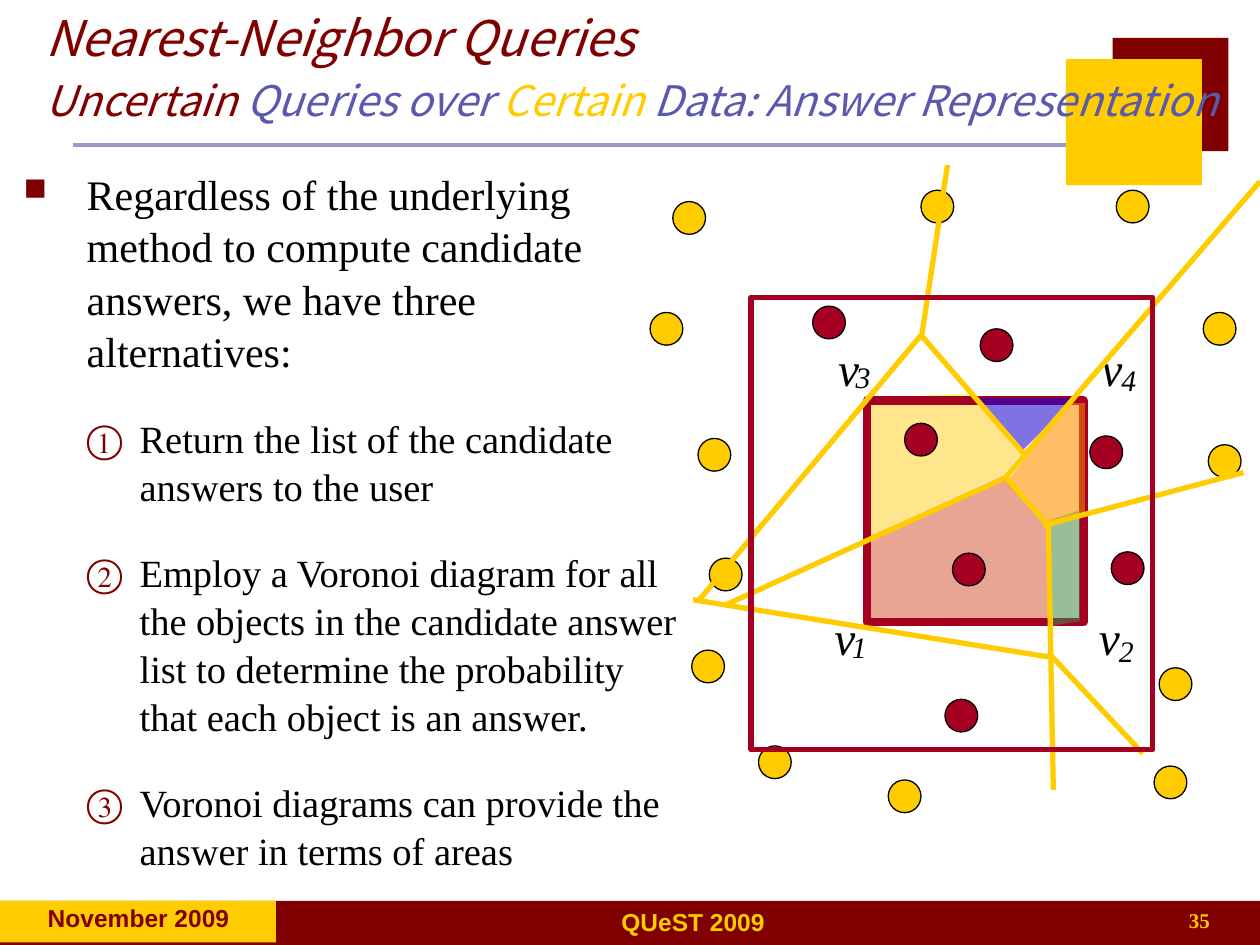
import dataclasses
from typing import NamedTuple

import lxml.etree
import pptx
import pptx.dml.color
import pptx.enum.shapes
import pptx.enum.text
import pptx.oxml.ns
import pptx.util

Inches = pptx.util.Inches
Pt = pptx.util.Pt
qn = pptx.oxml.ns.qn
ALIGN = pptx.enum.text.PP_ALIGN
SHAPE = pptx.enum.shapes.MSO_SHAPE


@dataclasses.dataclass(frozen=True)
class Theme:
    maroon: str = "800000"
    crimson: str = "A50021"
    gold: str = "FFCC00"
    violet: str = "5959AD"
    rule: str = "9999CC"
    peach: str = "FFCC99"
    black: str = "000000"
    serif: str = "Times New Roman"
    sans: str = "Arial"
    heading: str = "Noto Sans CJK KR"
    title: float = 28
    subtitle: float = 24
    lead: float = 24
    item: float = 22
    footer: float = 14
    page: float = 12
    vertex: float = 27
    index: float = 17


THEME = Theme()


class Run(NamedTuple):
    text: str
    size: float
    color: str


class Region(NamedTuple):
    color: str
    points: list


class Vertex(NamedTuple):
    index: str
    x: float
    y: float
    dx: float
    dy: float


def rgb(color: str):
    return pptx.dml.color.RGBColor.from_string(color)


def paint(shape, fill=None, line=None, width=0, alpha=None) -> None:
    shape.shadow.inherit = False
    if fill:
        shape.fill.solid()
        shape.fill.fore_color.rgb = rgb(fill)
        if alpha:
            clr = shape.fill._xPr.find(qn("a:solidFill"))[0]
            lxml.etree.SubElement(clr, qn("a:alpha"), val=str(alpha * 1000))
    else:
        shape.fill.background()
    if line:
        shape.line.color.rgb = rgb(line)
        shape.line.width = Pt(width)
    else:
        shape.line.fill.background()


def add_shape(slide, kind, box: tuple, **style) -> None:
    paint(slide.shapes.add_shape(kind, *map(Inches, box)), **style)


def add_region(slide, region: Region) -> None:
    start, *rest = [(Inches(x), Inches(y)) for x, y in region.points]
    builder = slide.shapes.build_freeform(*start, scale=1.0)
    builder.add_line_segments(rest, close=True)
    paint(builder.convert_to_shape(), fill=region.color, alpha=50)


def add_line(slide, ends: tuple, color: str, width: float) -> None:
    line = slide.shapes.add_connector(
        pptx.enum.shapes.MSO_CONNECTOR.STRAIGHT, *map(Inches, ends))
    line.line.color.rgb = rgb(color)
    line.line.width = Pt(width)
    lxml.etree.SubElement(line._element.spPr, qn("a:effectLst"))


def set_bullet(paragraph, margin: float, hang: float, numbered: bool) -> None:
    props = paragraph._p.get_or_add_pPr()
    props.set("marL", str(Inches(margin)))
    props.set("indent", str(-Inches(hang)))
    color = lxml.etree.SubElement(props, qn("a:buClr"))
    lxml.etree.SubElement(color, qn("a:srgbClr"), val=THEME.maroon)
    if numbered:
        lxml.etree.SubElement(props, qn("a:buAutoNum"), type="circleNumDbPlain")
    else:
        lxml.etree.SubElement(props, qn("a:buSzPct"), val="75000")
        lxml.etree.SubElement(props, qn("a:buFont"), typeface="Wingdings")
        lxml.etree.SubElement(props, qn("a:buChar"), char="n")


def add_text(slide, box: tuple, paragraphs: list, *, font=THEME.serif, bold=False,
             italic=False, align=ALIGN.LEFT, insets=(0.1, 0.05, 0.1, 0.05),
             middle=False, wrap=True, spacing=None, gap=0, bulleted=False) -> None:
    frame = slide.shapes.add_textbox(*map(Inches, box)).text_frame
    frame.word_wrap = wrap
    (frame.margin_left, frame.margin_top,
     frame.margin_right, frame.margin_bottom) = map(Inches, insets)
    if middle:
        frame.vertical_anchor = pptx.enum.text.MSO_ANCHOR.MIDDLE
    for number, runs in enumerate(paragraphs):
        paragraph = frame.add_paragraph() if number else frame.paragraphs[0]
        if bulleted:
            paragraph.level = min(number, 1)
            set_bullet(paragraph, *((0.92, 0.42) if number else (0.5, 0.5)), number > 0)
        paragraph.alignment = align
        if spacing:
            paragraph.line_spacing = spacing
        if number:
            paragraph.space_before = Pt(gap)
        for part in runs:
            if part is None:
                paragraph.add_line_break()
                continue
            run = paragraph.add_run()
            run.text = part.text
            run.font.name = font
            run.font.size = Pt(part.size)
            run.font.bold, run.font.italic = bold, italic
            run.font.color.rgb = rgb(part.color)
            if font == THEME.heading:
                lxml.etree.SubElement(run._r.get_or_add_rPr(), qn("a:ea"), typeface=font)


TITLE = [Run("Nearest-Neighbor Queries", THEME.title, THEME.maroon), None,
         Run("Uncertain ", THEME.subtitle, THEME.maroon),
         Run("Queries over ", THEME.subtitle, THEME.violet),
         Run("Certain", THEME.subtitle, THEME.gold),
         Run(" Data: Answer Representation", THEME.subtitle, THEME.violet)]
LEAD = ("Regardless of the underlying method to compute candidate answers, "
        "we have three alternatives:")
ALTERNATIVES = [
    "Return the list of the candidate answers to the user",
    "Employ a Voronoi diagram for all the objects in the candidate answer list "
    "to determine the probability that each object is an answer.",
    "Voronoi diagrams can provide the answer in terms of areas"]
BACK_REGIONS = [
    Region("FFFF00", [(6.89, 4.26), (6.89, 3.16), (7.73, 3.12), (8.11, 3.58), (7.98, 3.75)]),
    Region(THEME.crimson, [(6.89, 4.93), (6.89, 4.26), (7.98, 3.79), (8.32, 4.17), (8.32, 4.93)])]
FRONT_REGIONS = [
    Region("0000FF", [(7.73, 3.16), (8.53, 3.16), (8.11, 3.58)]),
    Region("339966", [(8.57, 4.93), (8.57, 4.05), (8.32, 4.13), (8.32, 4.97)]),
    Region("FF9900", [(8.61, 4.09), (8.61, 3.2), (8.49, 3.2), (7.98, 3.84), (8.32, 4.17)])]
OBJECT_SIZE = 0.26
OBJECTS = {
    THEME.gold: [(5.34, 1.6), (5.16, 2.48), (7.31, 1.51), (8.86, 1.51), (9.55, 2.48),
                 (9.59, 3.53), (5.54, 3.48), (5.49, 5.16), (9.2, 5.3), (6.02, 5.92),
                 (7.05, 6.19), (5.63, 4.43), (9.16, 6.08)],
    THEME.crimson: [(6.45, 2.43), (7.56, 4.39), (7.78, 2.61), (8.65, 3.46),
                    (7.18, 3.36), (8.82, 4.38), (7.5, 5.55)]}
VERTICES = [Vertex("1", 6.62, 4.83, 0.14, 0.16), Vertex("2", 8.72, 4.83, 0.16, 0.19),
            Vertex("3", 6.65, 2.69, 0.14, 0.16), Vertex("4", 8.74, 2.69, 0.16, 0.18)]
VORONOI_EDGES = [
    (7.52, 1.31, 7.31, 2.7), (10, 1.44, 7.98, 3.79), (5.55, 4.76, 7.31, 2.66),
    (7.31, 2.66, 8.15, 3.63), (8.36, 6.27, 8.32, 4.13), (5.5, 4.76, 8.36, 5.22),
    (5.76, 4.8, 7.98, 3.79), (8.28, 4.17, 9.87, 3.75), (8.32, 4.17, 7.98, 3.79),
    (9.07, 5.98, 8.32, 5.18)]


def draw_frame(slide) -> None:
    add_line(slide, (0.58, 1.15, 8.5, 1.15), THEME.rule, 2.25)
    for box, color in [((0, 7.15, 10, 0.35), THEME.maroon), ((0, 7.15, 2.19, 0.33), THEME.gold),
                       ((8.83, 0.3, 0.92, 0.9), THEME.maroon), ((8.46, 0.47, 1.08, 1), THEME.gold)]:
        add_shape(slide, SHAPE.RECTANGLE, box, fill=color)
    for label, box, color in [("QUeST 2009", (1.89, 7.15, 7.22, 0.33), THEME.gold),
                              ("November 2009", (0.12, 7.12, 1.96, 0.33), THEME.maroon)]:
        add_text(slide, box, [[Run(label, THEME.footer, color)]],
                 font=THEME.sans, bold=True, align=ALIGN.CENTER)
    add_text(slide, (7.62, 7.15, 2.08, 0.33), [[Run("35", THEME.page, THEME.gold)]],
             bold=True, align=ALIGN.RIGHT)


def draw_diagram(slide) -> None:
    add_shape(slide, SHAPE.RECTANGLE, (6.88, 3.18, 1.72, 1.76),
              fill=THEME.peach, alpha=50, line=THEME.crimson, width=4.75)
    for color, corners in OBJECTS.items():
        for x, y in corners:
            add_shape(slide, SHAPE.OVAL, (x, y, OBJECT_SIZE, OBJECT_SIZE),
                      fill=color, line=THEME.black)
    for vertex in VERTICES:
        for text, size, box in [
                ("v", THEME.vertex, (vertex.x, vertex.y, 0.17, 0.45)),
                (vertex.index, THEME.index,
                 (vertex.x + vertex.dx, vertex.y + vertex.dy, 0.12, 0.28))]:
            add_text(slide, box, [[Run(text, size, THEME.black)]], italic=True,
                     align=ALIGN.CENTER, insets=(0, 0, 0, 0), wrap=False)
    for region in FRONT_REGIONS:
        add_region(slide, region)
    for edge in VORONOI_EDGES:
        add_line(slide, edge, THEME.gold, 3)
    add_shape(slide, SHAPE.RECTANGLE, (5.96, 2.36, 3.19, 3.59), line=THEME.crimson, width=3)


def main() -> None:
    deck = pptx.Presentation()
    deck.slide_width, deck.slide_height = Inches(10), Inches(7.5)
    slide = deck.slides.add_slide(deck.slide_layouts[6])
    draw_frame(slide)
    for region in BACK_REGIONS:
        add_region(slide, region)
    add_text(slide, (0.17, 0.11, 9.66, 0.83), [TITLE], font=THEME.heading, italic=True,
             insets=(0.19, 0.05, 0, 0.05), middle=True, spacing=Pt(33.5))
    body = [[Run(LEAD, THEME.lead, THEME.black)]]
    body += [[Run(text, THEME.item, THEME.black)] for text in ALTERNATIVES]
    add_text(slide, (0.09, 1.27, 5.4, 5.85), body, spacing=1.04, gap=21.5, bulleted=True)
    draw_diagram(slide)
    deck.save("out.pptx")


if __name__ == "__main__":
    main()
